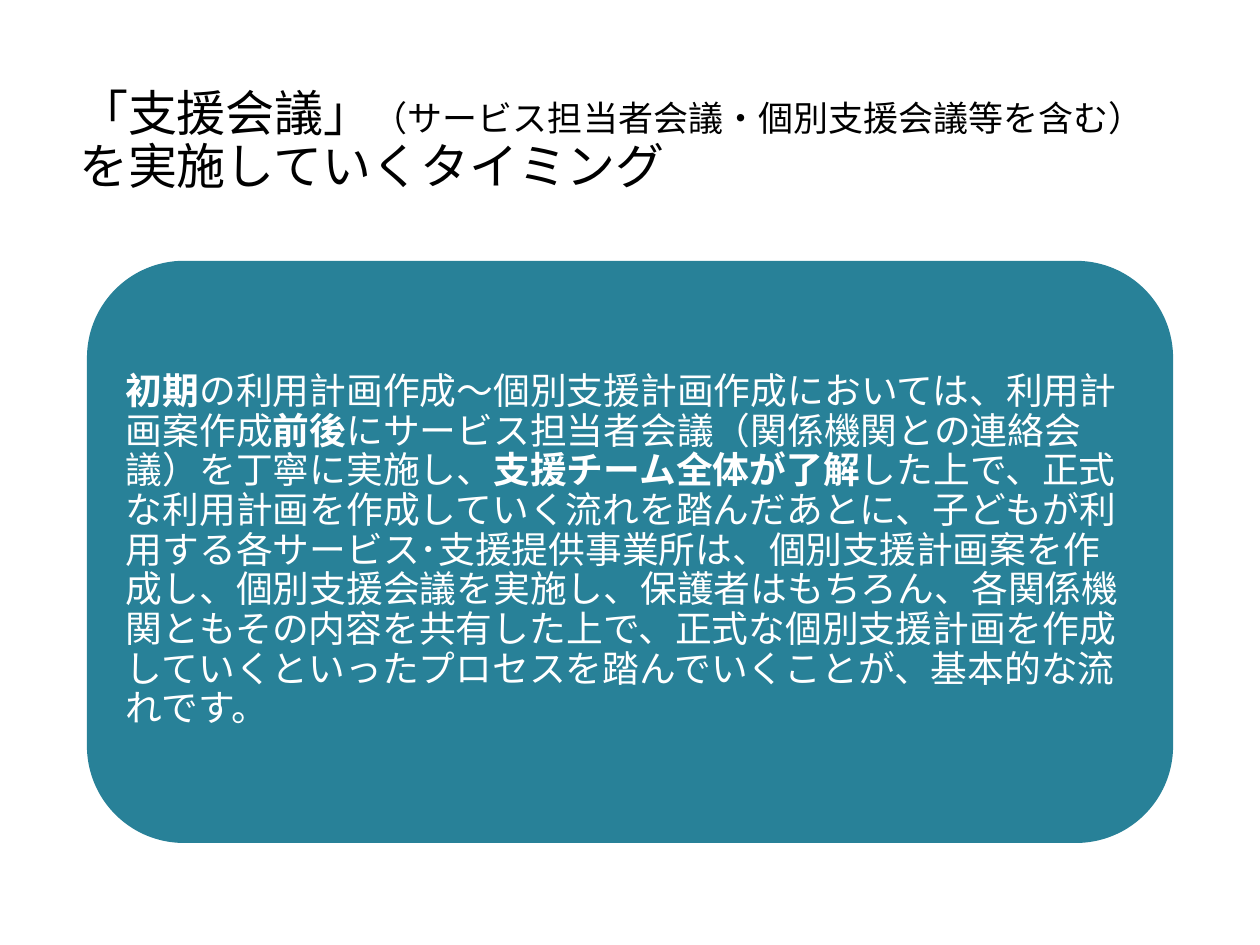
"""Build a slide on when to hold support meetings."""
from typing import NamedTuple

from pptx import Presentation
from pptx import util as u
from pptx.dml.color import RGBColor
from pptx.enum import shapes, text


class Run(NamedTuple):
    words: str
    size: float
    bold: bool = False


class Box(NamedTuple):
    left: float
    top: float
    width: float
    height: float

    def place(self) -> list[u.Length]:
        return [u.Inches(side) for side in self]


TITLE = [
    Run("「支援会議」", 28),
    Run("（サービス担当者会議・個別支援会議等を含む）", 20),
    Run("を実施していくタイミング", 28),
]
BODY = [
    Run("初期", 21, True),
    Run("の利用計画作成～個別支援計画作成においては、利用計画案作成", 21),
    Run("前後", 21, True),
    Run("にサービス担当者会議（関係機関との連絡会議）を丁寧に実施し、", 21),
    Run("支援チーム全体が了解", 21, True),
    Run("した上で、正式な利用計画を作成していく流れを踏んだあとに、"
        "子どもが利用する各サービス･支援提供事業所は、個別支援計画案を作成し、"
        "個別支援会議を実施し、保護者はもちろん、各関係機関ともその内容を共有した上で、"
        "正式な個別支援計画を作成していくといったプロセスを踏んでいくことが、"
        "基本的な流れです。", 21),
]


def color(code: str) -> RGBColor:
    return RGBColor.from_string(code)


def panel(slide, box: Box, fill: str) -> None:
    shape = slide.shapes.add_shape(shapes.MSO_SHAPE.ROUNDED_RECTANGLE, *box.place())
    shape.shadow.inherit = False
    shape.fill.solid()
    shape.fill.fore_color.rgb = color(fill)
    shape.line.fill.background()


def write(slide, box: Box, runs: list[Run], ink: str, inset: float, after: float = 0) -> None:
    frame = slide.shapes.add_textbox(*box.place()).text_frame
    frame.word_wrap = True
    frame.vertical_anchor = text.MSO_ANCHOR.MIDDLE
    frame.margin_left = frame.margin_right = u.Inches(inset)
    para = frame.paragraphs[0]
    para.line_spacing = 0.9
    para.space_after = u.Pt(after)
    for item in runs:
        run = para.add_run()
        run.text = item.words
        run.font.name = "Calibri"
        run.font.size = u.Pt(item.size)
        run.font.bold = item.bold
        run.font.color.rgb = color(ink)


def main() -> None:
    deck = Presentation()
    deck.slide_width, deck.slide_height = u.Inches(10), u.Inches(7.5)
    slide = deck.slides.add_slide(deck.slide_layouts[6])
    write(slide, Box(0.53, 0.4, 8.9, 1.45), TITLE, "000000", 0.1)
    panel(slide, Box(0.69, 2.07, 8.62, 4.62), "288198")
    write(slide, Box(0.91, 2.29, 8.17, 4.17), BODY, "FFFFFF", 0.09, 7.35)
    deck.save("out.pptx")


if __name__ == "__main__":
    main()
